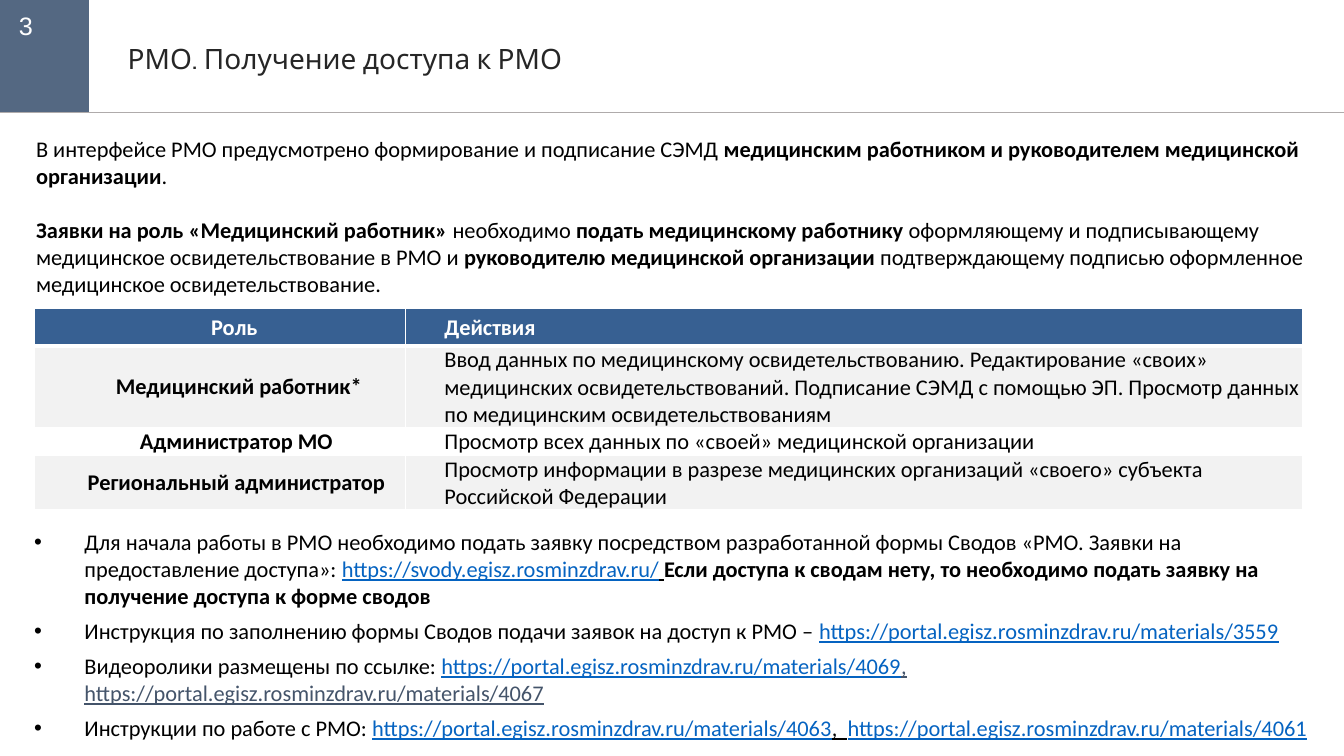
from lxml import etree
from pptx import Presentation
from pptx.dml.color import RGBColor
from pptx.enum import shapes, text
from pptx.oxml import ns
from pptx.util import Pt

BLACK = RGBColor(0x00, 0x00, 0x00)
WHITE = RGBColor(0xFF, 0xFF, 0xFF)
DARK = RGBColor(0x26, 0x26, 0x26)
SLATE = RGBColor(0x54, 0x68, 0x82)
RULE = RGBColor(0xAF, 0xAB, 0xAB)
HEADER = RGBColor(0x37, 0x60, 0x92)
BAND = RGBColor(0xF2, 0xF2, 0xF2)
LINK = RGBColor(0x05, 0x63, 0xC1)
VISITED = RGBColor(0x44, 0x54, 0x6A)

BODY = dict(size=Pt(16), name="Calibri", color=BLACK, bold=False)
BOLD = {**BODY, "bold": True}
HEAD = {**BOLD, "color": WHITE}
URL = {**BODY, "color": LINK, "underline": True}
URL_SEEN = {**URL, "color": VISITED}
URL_GAP = {**URL, "color": BLACK}
NUMBER = dict(size=Pt(18), name="Arial", color=WHITE)
TITLE = dict(size=Pt(20), name="Cabin", color=DARK)

PORTAL = "https://portal.egisz.rosminzdrav.ru/materials/"
INTRO = [
    [("В интерфейсе РМО предусмотрено формирование и подписание СЭМД ", BODY),
     ("медицинским работником и руководителем медицинской организации", BOLD),
     (".", BODY)],
    [("Заявки на роль «Медицинский работник» ", BOLD),
     ("необходимо ", BODY),
     ("подать медицинскому работнику", BOLD),
     (" оформляющему и подписывающему медицинское освидетельствование в РМО и ", BODY),
     ("руководителю медицинской организации ", BOLD),
     ("подтверждающему подписью оформленное медицинское освидетельствование.", BODY)],
]
ROLES = [
    ("Роль", "Действия"),
    ("Медицинский работник*",
     "Ввод данных по медицинскому освидетельствованию. Редактирование «своих» "
     "медицинских освидетельствований. Подписание СЭМД с помощью ЭП. "
     "Просмотр данных по медицинским освидетельствованиям"),
    ("Администратор МО ", "Просмотр всех данных по «своей» медицинской организации"),
    ("Региональный администратор ",
     "Просмотр информации в разрезе медицинских организаций «своего» "
     "субъекта Российской Федерации"),
]
COL_WIDTHS = (265, 641)
ROW_HEIGHTS = (22, 54, 19, 36)
STEPS = [
    [("Для начала работы в РМО необходимо подать заявку посредством разработанной формы "
      "Сводов «РМО. Заявки на предоставление доступа»: ", BODY),
     ("https://svody.egisz.rosminzdrav.ru/", URL),
     (" ", URL_GAP),
     ("Если доступа к сводам нету, то необходимо подать заявку на получение доступа "
      "к форме сводов", BOLD)],
    [("Инструкция по заполнению формы Сводов подачи заявок на доступ к РМО – ", BODY),
     (PORTAL + "3559", URL)],
    [("Видеоролики размещены по ссылке: ", BODY),
     (PORTAL + "4069", URL),
     (", " + PORTAL + "4067", URL_SEEN)],
    [("Инструкции по работе с РМО: ", BODY),
     (PORTAL + "4063", URL),
     (",  ", URL_GAP),
     (PORTAL + "4061", URL)],
]


def add_runs(p, runs):
    for words, style in runs:
        r = p.add_run()
        r.text = words
        for key, value in style.items():
            if key == "color":
                r.font.color.rgb = value
            else:
                setattr(r.font, key, value)


def add_text(box, paragraphs, gap=0, first_gap=0, wrap=True):
    tf = slide.shapes.add_textbox(*map(Pt, box)).text_frame
    tf.word_wrap = wrap
    for i, runs in enumerate(paragraphs):
        p = tf.add_paragraph() if i else tf.paragraphs[0]
        p.space_before = Pt(gap if i else first_gap)
        add_runs(p, runs)
    return tf


def add_bullet(p, indent):
    pPr = p._p.get_or_add_pPr()
    pPr.set("marL", str(Pt(indent)))
    pPr.set("indent", str(-Pt(indent)))
    etree.SubElement(pPr, ns.qn("a:buFont")).set("typeface", "Arial")
    etree.SubElement(pPr, ns.qn("a:buChar")).set("char", "•")


def add_borders(cell, widths):
    tcPr = cell._tc.get_or_add_tcPr()
    for i, (side, width) in enumerate(widths.items()):
        ln = etree.Element(ns.qn("a:ln" + side), w=str(Pt(width)))
        fill = etree.SubElement(ln, ns.qn("a:solidFill"))
        etree.SubElement(fill, ns.qn("a:srgbClr")).set("val", str(WHITE))
        tcPr.insert(i, ln)


prs = Presentation()
prs.slide_width, prs.slide_height = Pt(960), Pt(540)
slide = prs.slides.add_slide(prs.slide_layouts[6])

sp = slide.shapes.add_shape(shapes.MSO_SHAPE.RECTANGLE, 0, 0, Pt(63.5), Pt(80.5))
sp.shadow.inherit = False
sp.fill.solid()
sp.fill.fore_color.rgb = SLATE
sp.line.fill.background()

line = slide.shapes.add_connector(
    shapes.MSO_CONNECTOR.STRAIGHT, 0, Pt(80), Pt(960), Pt(80))
line.line.color.rgb = RULE
line.line.width = Pt(0.5)
etree.SubElement(line._element.spPr, ns.qn("a:effectLst"))

add_text((6.5, 3.6, 24.5, 29), [[("3", NUMBER)]], wrap=False)
add_text((84.2, 26, 775.5, 31.5), [[("РМО. Получение доступа к РМО", TITLE)]], first_gap=4)
add_text((18.7, 93, 931, 124), INTRO, gap=19.5)

table = slide.shapes.add_table(
    len(ROLES), len(COL_WIDTHS), Pt(24.5), Pt(220.5),
    Pt(sum(COL_WIDTHS)), Pt(sum(ROW_HEIGHTS))).table
table.horz_banding = False
for column, width in zip(table.columns, COL_WIDTHS):
    column.width = Pt(width)
for i, (row, height, words) in enumerate(zip(table.rows, ROW_HEIGHTS, ROLES)):
    row.height = Pt(height)
    top, right, bottom = (3.6, 7.2, 3.6) if i == 0 else (0.7, 0.7, 0)
    cell_format = dict(
        margin_left=Pt(28), margin_top=Pt(top), margin_right=Pt(right),
        margin_bottom=Pt(bottom), vertical_anchor=text.MSO_ANCHOR.MIDDLE)
    for j, cell in enumerate(row.cells):
        for key, value in cell_format.items():
            setattr(cell, key, value)
        cell.fill.solid()
        cell.fill.fore_color.rgb = HEADER if i == 0 else (BAND if i % 2 else WHITE)
        add_borders(cell, dict(L=1, R=1, T=3 if i == 1 else 1, B=3 if i == 0 else 1))
        p = cell.text_frame.paragraphs[0]
        p.alignment = text.PP_ALIGN.LEFT if j else text.PP_ALIGN.CENTER
        add_runs(p, [(words[j], HEAD if i == 0 else (BODY if j else BOLD))])

tf = add_text((17.3, 373.7, 931, 144), STEPS, gap=6, first_gap=6)
for p in tf.paragraphs:
    add_bullet(p, 36)

prs.save("out.pptx")
